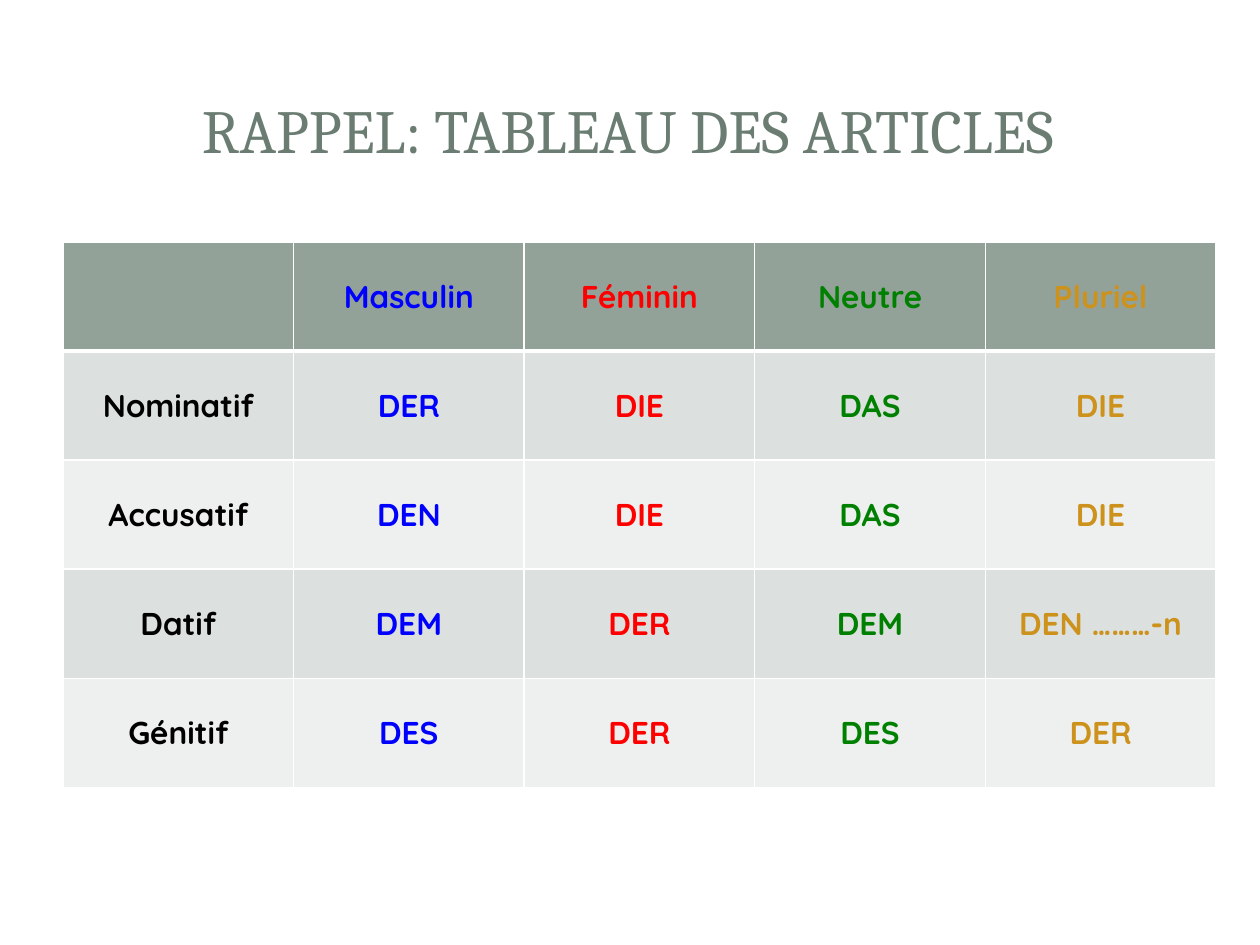
"""Build a slide that recalls the German articles by case and gender."""
from dataclasses import dataclass

from lxml import etree
from pptx import Presentation
from pptx import util as u
from pptx.dml.color import RGBColor
from pptx.enum import shapes, text
from pptx.oxml.ns import qn


@dataclass(frozen=True)
class Theme:
    """Hold the colours, fonts and sizes of the deck."""
    panel: str = "FFFFFF"
    title: str = "6B7D72"
    header: str = "93A299"
    bands: tuple = ("DCE0DE", "EEF0EF")
    columns: tuple = ("000000", "0000FF", "FF0000", "008000", "CD921B")
    border: str = "FFFFFF"
    thin: int = 1
    thick: int = 3
    title_font: str = "Cambria"
    table_font: str = "Quicksand"
    title_size: int = 35
    table_size: int = 18


THEME = Theme()
COLUMNS, ROWS = 100, 75
WIDTH, HEIGHT = u.Inches(10), u.Inches(7.5)
ROUND, PLAIN = shapes.MSO_SHAPE.ROUNDED_RECTANGLE, shapes.MSO_SHAPE.RECTANGLE
PANELS = (
    (ROUND, (1, 1.1, 98, 72.9), 100),
    (PLAIN, (3, 3, 94, 14.5), 83),
    (PLAIN, (4.1, 4.1, 91.7, 12.2), 100),
)
CORNER = 0.02
TITLE_BOX = (4.7, 4.5, 90.3, 11.4)
TABLE_BOX = (5, 19.2, 91.5, 43.3)
TITLE = "RAPPEL: TABLEAU DES ARTICLES"
ARTICLES = (
    ("", "Masculin", "Féminin", "Neutre", "Pluriel"),
    ("Nominatif", "DER", "DIE", "DAS", "DIE"),
    ("Accusatif", "DEN", "DIE", "DAS", "DIE"),
    ("Datif", "DEM", "DER", "DEM", "DEN ………-n"),
    ("Génitif", "DES", "DER", "DES", "DER"),
)


def place(box):
    """Turn grid columns and rows into left, top, width and height."""
    units = (WIDTH / COLUMNS, HEIGHT / ROWS) * 2
    return [round(count * unit) for count, unit in zip(box, units)]


def apply(target, values):
    """Set each attribute of the target from a dict."""
    for name, value in values.items():
        setattr(target, name, value)


def paint(fill, colour):
    """Give a fill one solid colour."""
    fill.solid()
    fill.fore_color.rgb = RGBColor.from_string(colour)


def write(frame, words, colour, font):
    """Write one centred paragraph in the given colour and font."""
    para = frame.paragraphs[0]
    para.alignment = text.PP_ALIGN.CENTER
    span = para.add_run()
    span.text = words
    apply(span.font, font)
    span.font.color.rgb = RGBColor.from_string(colour)


def draw_borders(cell, widths):
    """Draw the four cell borders with the given widths in points."""
    properties = cell._tc.get_or_add_tcPr()
    for side, width in widths.items():
        line = etree.SubElement(properties, qn(f"a:ln{side}"), w=str(u.Pt(width)))
        fill = etree.SubElement(line, qn("a:solidFill"))
        etree.SubElement(fill, qn("a:srgbClr"), val=THEME.border)


def add_panels(page, panels):
    """Lay the background panels behind the title, from back to front."""
    title = page.shapes.title._element
    for kind, box, opacity in panels:
        panel = page.shapes.add_shape(kind, *place(box))
        panel.shadow.inherit = False
        paint(panel.fill, THEME.panel)
        panel.line.fill.background()
        if kind == ROUND:
            panel.adjustments[0] = CORNER
        if opacity < 100:
            colour = panel._element.spPr.find(".//" + qn("a:srgbClr"))
            etree.SubElement(colour, qn("a:alpha"), val=str(opacity * 1000))
        title.addprevious(panel._element)


def add_title(page, box):
    """Place the slide title in its box."""
    title = page.shapes.title
    apply(title, dict(zip(("left", "top", "width", "height"), place(box))))
    apply(title.text_frame, {"word_wrap": True,
                             "vertical_anchor": text.MSO_ANCHOR.MIDDLE})
    write(title.text_frame, TITLE, THEME.title,
          {"name": THEME.title_font, "size": u.Pt(THEME.title_size)})


def add_articles(page, box, rows):
    """Place the table of articles with equal columns and rows in its box."""
    table = page.shapes.add_table(len(rows), len(rows[0]), *place(box)).table
    font = {"name": THEME.table_font, "size": u.Pt(THEME.table_size), "bold": True}
    for r, row in enumerate(rows):
        fill = THEME.bands[(r - 1) % 2] if r else THEME.header
        borders = {"L": THEME.thin, "R": THEME.thin,
                   "T": THEME.thick if r == 1 else THEME.thin,
                   "B": THEME.thick if r == 0 else THEME.thin}
        for c, (words, colour) in enumerate(zip(row, THEME.columns)):
            cell = table.cell(r, c)
            draw_borders(cell, borders)
            paint(cell.fill, fill)
            cell.vertical_anchor = text.MSO_ANCHOR.MIDDLE
            if words:
                write(cell.text_frame, words, colour, font)


def main():
    """Build and save the deck."""
    deck = Presentation()
    apply(deck, {"slide_width": WIDTH, "slide_height": HEIGHT})
    page = deck.slides.add_slide(deck.slide_layouts.get_by_name("Title Only"))
    add_panels(page, PANELS)
    add_title(page, TITLE_BOX)
    add_articles(page, TABLE_BOX, ARTICLES)
    deck.save("out.pptx")


if __name__ == "__main__":
    main()
